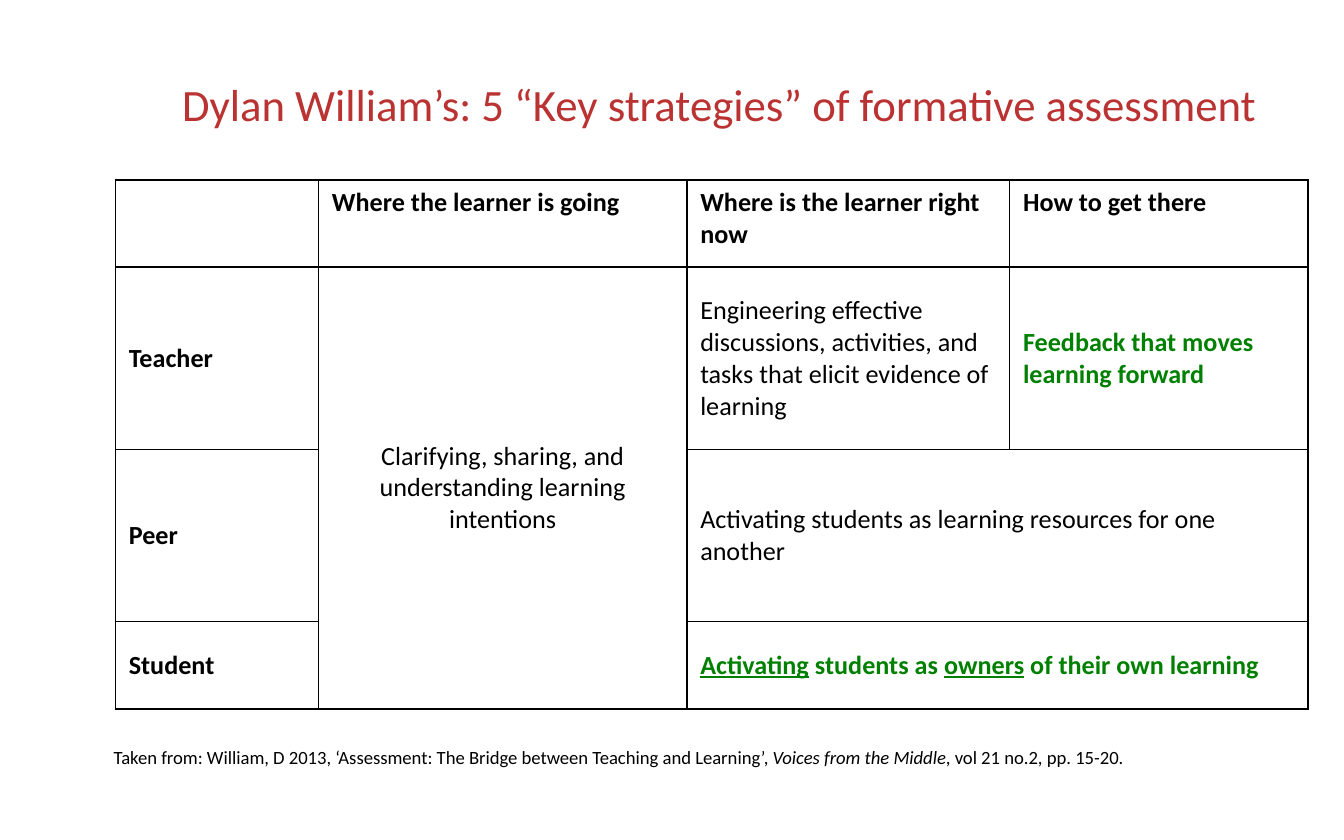
from dataclasses import dataclass

from lxml.etree import SubElement
from pptx import Presentation
from pptx.dml.color import RGBColor
from pptx.enum.text import MSO_ANCHOR, MSO_AUTO_SIZE, PP_ALIGN
from pptx.oxml.ns import qn
from pptx.util import Cm, Pt


@dataclass(frozen=True)
class Theme:
    font: str = "Calibri"
    red: RGBColor = RGBColor(0xBA, 0x32, 0x32)
    green: RGBColor = RGBColor(0x00, 0x80, 0x00)
    black: RGBColor = RGBColor(0x00, 0x00, 0x00)
    white: RGBColor = RGBColor(0xFF, 0xFF, 0xFF)
    title_size: Pt = Pt(24)
    table_size: Pt = Pt(14)
    source_size: Pt = Pt(10)
    border: Pt = Pt(1)


theme = Theme()


def style_paragraph(para, size, color, bold=False, align=PP_ALIGN.LEFT):
    para.alignment = align
    para.font.name = theme.font
    para.font.size = size
    para.font.color.rgb = color
    para.font.bold = bold


def draw_borders(cell):
    properties = cell._tc.get_or_add_tcPr()
    for side in ("lnL", "lnR", "lnT", "lnB"):
        line = SubElement(properties, qn(f"a:{side}"), w=str(theme.border))
        fill = SubElement(line, qn("a:solidFill"))
        SubElement(fill, qn("a:srgbClr"), val=str(theme.black))


deck = Presentation()
deck.slide_width, deck.slide_height = Cm(25.4), Cm(15.88)
page = deck.slides.add_slide(deck.slide_layouts[6])

# Title
title = page.shapes.add_textbox(Cm(2.49), Cm(0.64), Cm(22.2), Cm(2.64)).text_frame
title.word_wrap = True
title.vertical_anchor = MSO_ANCHOR.MIDDLE
title.text = "Dylan William’s: 5 “Key strategies” of formative assessment"
style_paragraph(title.paragraphs[0], theme.title_size, theme.red, align=PP_ALIGN.CENTER)

# Table grid
column_widths = [3.84, 6.96, 6.1, 5.64]
row_heights = [1.65, 3.45, 3.25, 1.65]
table = page.shapes.add_table(
    len(row_heights), len(column_widths),
    Cm(2.18), Cm(3.4), Cm(sum(column_widths)), Cm(sum(row_heights)),
).table
table.first_row = table.horz_banding = False
for column, width in zip(table.columns, column_widths):
    column.width = Cm(width)
for row, height in zip(table.rows, row_heights):
    row.height = Cm(height)
for cell in table.iter_cells():
    draw_borders(cell)
    cell.fill.solid()
    cell.fill.fore_color.rgb = theme.white

# Merged areas
table.cell(1, 1).merge(table.cell(3, 1))
for row_index in (2, 3):
    table.cell(row_index, 2).merge(table.cell(row_index, 3))

# Table text: row, column, text, colour, bold; underscores enclose underlined words
entries = [
    (0, 1, "Where the learner is going", theme.black, True),
    (0, 2, "Where is the learner right now", theme.black, True),
    (0, 3, "How to get there", theme.black, True),
    (1, 0, "Teacher", theme.black, True),
    (1, 1, "Clarifying, sharing, and understanding learning intentions", theme.black, False),
    (1, 2, "Engineering effective discussions, activities, and tasks that elicit "
           "evidence of learning", theme.black, False),
    (1, 3, "Feedback that moves learning forward", theme.green, True),
    (2, 0, "Peer", theme.black, True),
    (2, 2, "Activating students as learning resources for one another", theme.black, False),
    (3, 0, "Student", theme.black, True),
    (3, 2, "_Activating_ students as _owners_ of their own learning", theme.green, True),
]
for row_index, column_index, text, color, bold in entries:
    cell = table.cell(row_index, column_index)
    cell.vertical_anchor = MSO_ANCHOR.MIDDLE if row_index else MSO_ANCHOR.TOP
    para = cell.text_frame.paragraphs[0]
    align = PP_ALIGN.CENTER if cell.is_merge_origin and column_index == 1 else PP_ALIGN.LEFT
    style_paragraph(para, theme.table_size, color, bold, align)
    for part_index, part in enumerate(text.split("_")):
        if part:
            span = para.add_run()
            span.text = part
            span.font.underline = part_index % 2 == 1

# Source reference
source = page.shapes.add_textbox(Cm(1.9), Cm(13.97), Cm(20.22), Cm(0.69)).text_frame
source.word_wrap = True
source.auto_size = MSO_AUTO_SIZE.SHAPE_TO_FIT_TEXT
para = source.paragraphs[0]
style_paragraph(para, theme.source_size, theme.black)
for text, italic in [
    ("Taken from: William, D 2013, ‘Assessment: The Bridge between Teaching and Learning’, ", False),
    ("Voices from the Middle", True),
    (", vol 21 no.2, pp. 15-20.", False),
]:
    span = para.add_run()
    span.text = text
    span.font.italic = italic

deck.save("out.pptx")
